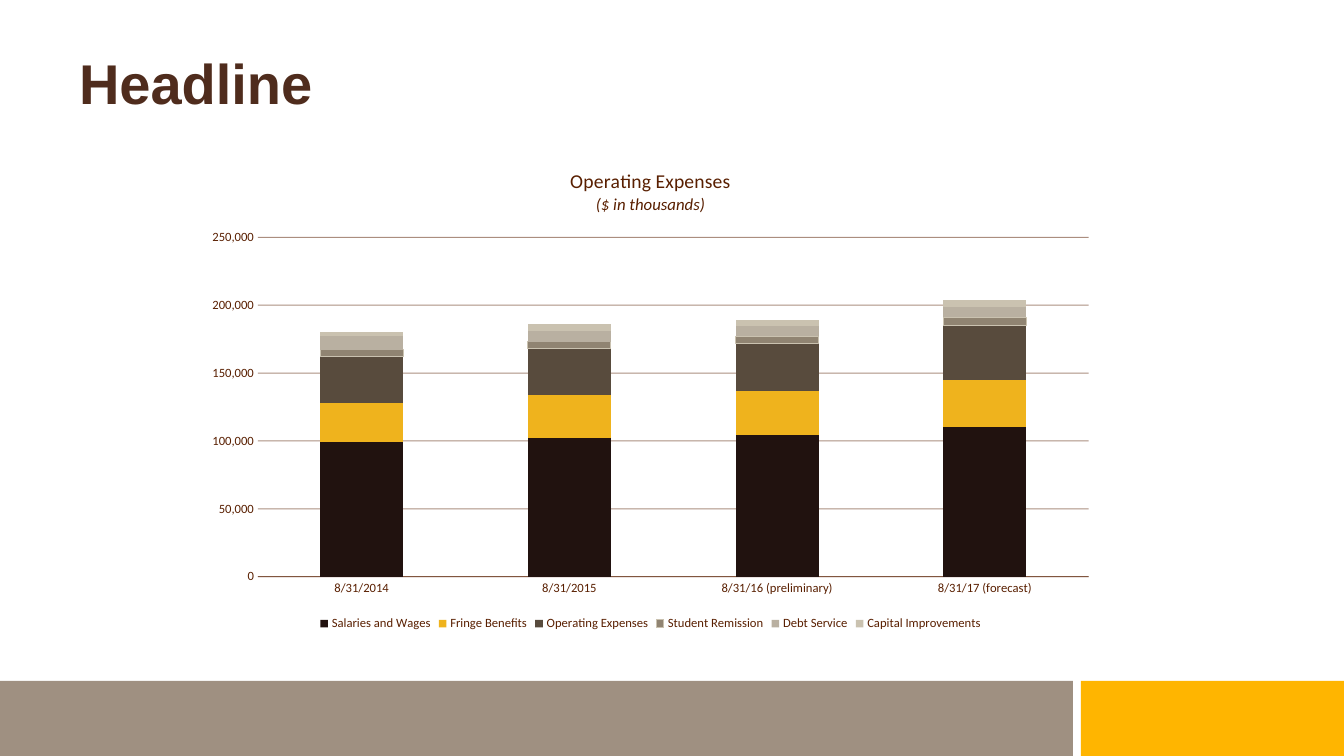
from lxml.etree import SubElement
from pptx import Presentation
from pptx.chart.data import CategoryChartData
from pptx.dml.color import RGBColor
from pptx.enum.chart import XL_CHART_TYPE, XL_LEGEND_POSITION, XL_TICK_MARK
from pptx.enum.shapes import MSO_SHAPE
from pptx.enum.text import MSO_ANCHOR, MSO_AUTO_SIZE, PP_ALIGN
from pptx.oxml import parse_xml
from pptx.oxml.ns import nsdecls, qn
from pptx.util import Pt

PX = 914400 / 100.8
COLORS = {
    "headline": "4F2C1D", "band": "9F9081", "accent": "FFB500", "chart": "591F00",
    "Salaries and Wages": "21120F", "Fringe Benefits": "EFB31D",
    "Operating Expenses": "584B3D", "Student Remission": "908472",
    "Debt Service": "B9B0A1", "Capital Improvements": "CAC2B0",
}
DATES = ["8/31/2014", "8/31/2015", "8/31/16 (preliminary)", "8/31/17 (forecast)"]
EXPENSES = {
    "Salaries and Wages": [99000, 102000, 104000, 110000],
    "Fringe Benefits": [29000, 32000, 33000, 35000],
    "Operating Expenses": [34000, 34000, 35000, 40000],
    "Student Remission": [5000, 5000, 5000, 6000],
    "Debt Service": [10000, 8000, 8000, 8000],
    "Capital Improvements": [3000, 5000, 4000, 5000],
}
# Inner plot area as fractions of the chart frame
PLOT = {"x": 0.07, "y": 0.18, "w": 0.91, "h": 0.7}


def rgb(name):
    return RGBColor.from_string(COLORS[name])


def px(*values):
    return [round(v * PX) for v in values]


def assign(obj, **values):
    for name, value in values.items():
        setattr(obj, name, value)


class SlideBuilder:
    def __init__(self, slide):
        self.s = slide

    def font(self, font, size, color, name="Calibri", bold=False, italic=False):
        assign(font, size=Pt(size), name=name, bold=bold, italic=italic)
        font.color.rgb = rgb(color)

    def line(self, line, color):
        line.width = Pt(0.75)
        line.color.rgb = rgb(color)

    def title(self, text, *box):
        sp = self.s.shapes.title
        assign(sp, **dict(zip(("left", "top", "width", "height"), px(*box))))
        tf = sp.text_frame
        assign(tf, text=text, word_wrap=True, auto_size=MSO_AUTO_SIZE.NONE,
               vertical_anchor=MSO_ANCHOR.BOTTOM)
        p = tf.paragraphs[0]
        assign(p, alignment=PP_ALIGN.LEFT, line_spacing=0.8)
        self.font(p.runs[0].font, 40, "headline", "Arial", bold=True)

    def bar(self, color, *box):
        sp = self.s.shapes.add_shape(MSO_SHAPE.RECTANGLE, *px(*box))
        sp.shadow.inherit = False
        sp.fill.solid()
        sp.fill.fore_color.rgb = rgb(color)
        sp.line.fill.background()

    def stacked_chart(self, *box):
        data = CategoryChartData(number_format="#,##0")
        data.categories = DATES
        for name, values in EXPENSES.items():
            data.add_series(name, values)
        chart = self.s.shapes.add_chart(
            XL_CHART_TYPE.COLUMN_STACKED, *px(*box), data).chart
        self.font(chart.font, 10, "chart")

        # Columns
        plot = chart.plots[0]
        assign(plot, gap_width=150, overlap=100, vary_by_categories=False)
        for series in plot.series:
            series.format.fill.solid()
            series.format.fill.fore_color.rgb = rgb(series.name)
            if series.name == "Student Remission":
                self.line(series.format.line, "Capital Improvements")

        self.chart_title(chart)
        self.axes(chart)
        self.plot_layout(chart)

        # Legend
        chart.has_legend = True
        assign(chart.legend, position=XL_LEGEND_POSITION.BOTTOM, include_in_layout=False)
        self.font(chart.legend.font, 9, "chart")

    def chart_title(self, chart):
        chart.has_title = True
        tf = chart.chart_title.text_frame
        tf.text = "Operating Expenses\n($ in thousands)"
        for p, size, italic in zip(tf.paragraphs, (14, 12), (False, True)):
            self.font(p.runs[0].font, size, "chart", italic=italic)

    def axes(self, chart):
        cat, val = chart.category_axis, chart.value_axis
        assign(val, minimum_scale=0, maximum_scale=250000, major_unit=50000,
               has_major_gridlines=True)
        assign(val.tick_labels, number_format="#,##0", number_format_is_linked=False)
        val.format.line.fill.background()
        self.line(cat.format.line, "chart")
        self.line(val.major_gridlines.format.line, "chart")
        for axis in (cat, val):
            assign(axis, major_tick_mark=XL_TICK_MARK.NONE,
                   minor_tick_mark=XL_TICK_MARK.NONE)
            self.font(axis.tick_labels.font, 9, "chart")
            for color in axis._element.xpath(".//a:ln//a:srgbClr"):
                SubElement(color, qn("a:alpha"), val="50000")

    def plot_layout(self, chart):
        area = chart._chartSpace.chart.plotArea
        for old in area.findall(qn("c:layout")):
            area.remove(old)
        sizes = "".join(f'<c:{k} val="{v}"/>' for k, v in PLOT.items())
        area.insert(0, parse_xml(
            f'<c:layout {nsdecls("c")}><c:manualLayout><c:layoutTarget val="inner"/>'
            f'<c:xMode val="edge"/><c:yMode val="edge"/>{sizes}'
            '</c:manualLayout></c:layout>'))


def main():
    prs = Presentation()
    prs.slide_width, prs.slide_height = px(1344, 756)
    slide = SlideBuilder(prs.slides.add_slide(prs.slide_layouts[5]))

    # Footer bands
    slide.bar("band", 0, 681, 1073, 75)
    slide.bar("accent", 1081, 681, 263, 75)

    # Headline and chart
    slide.title("Headline", 69, 54, 907, 66)
    slide.stacked_chart(194, 150, 913, 485)

    prs.save("out.pptx")


if __name__ == "__main__":
    main()
